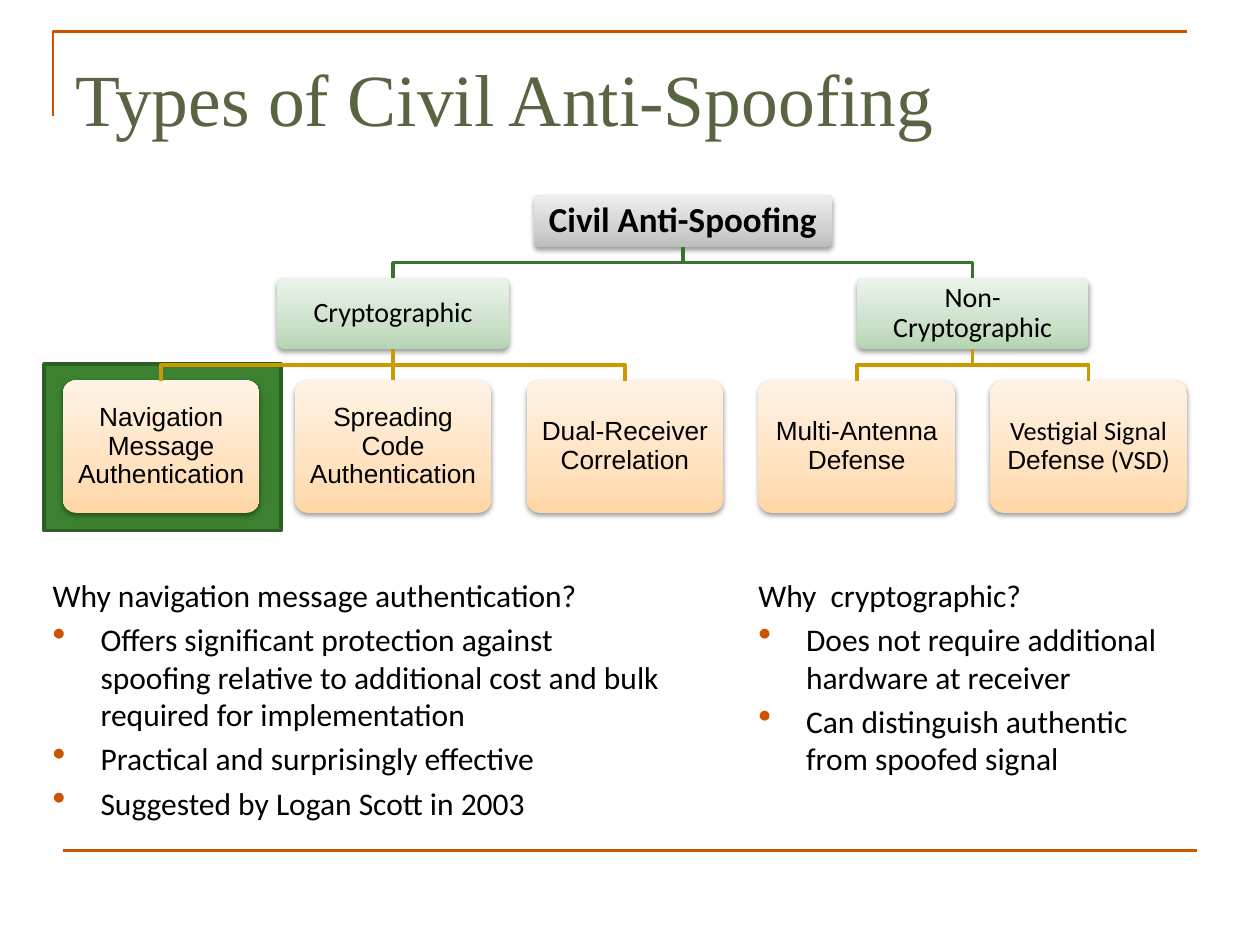
from dataclasses import dataclass
from typing import NamedTuple

from lxml.etree import SubElement
from pptx import Presentation
from pptx.dml.color import RGBColor
from pptx.enum.shapes import MSO_CONNECTOR, MSO_SHAPE
from pptx.enum.text import MSO_ANCHOR, PP_ALIGN
from pptx.oxml.ns import qn
from pptx.util import Inches, Pt

COLORS = {
    "rule": "CC5300", "title": "596442", "text": "000000", "shadow": "000000",
    "highlight": "3B812F", "highlight_edge": "2C5F23",
    "green_edge": "35742A", "gold_edge": "CC9900",
}
GRADIENTS = {  # from bottom to top
    "gray": ("BDBDBD", "D1D1D1", "EEEEEE"),
    "green": ("B5D5B2", "CCE1CA", "EBF4EB"),
    "orange": ("FFD6A5", "FFE2BF", "FFF3E7"),
}
STOPS = (0, 35000, 100000)
GRID_LEFT, COLUMN = 0.36, 1.84  # five equal columns, one per leaf


class Piece(NamedTuple):
    text: str
    font: str


class Level(NamedTuple):
    top: float
    width: float
    height: float
    gradient: str
    size: int
    inset: float
    bold: bool = False


@dataclass
class Node:
    column: float
    level: Level
    pieces: list[Piece]

    @property
    def center(self) -> float:
        return GRID_LEFT + COLUMN * (self.column + 0.5)

    @property
    def bottom(self) -> float:
        return self.level.top + self.level.height


class Notes(NamedTuple):
    left: float
    width: float
    heading: str
    bullets: list[str]


ROOT = Level(1.55, 2.37, 0.41, "gray", 20, 0.08, True)
FAMILY = Level(2.21, 1.84, 0.56, "green", 16, 0.07)
METHOD = Level(3.02, 1.56, 1.05, "orange", 15, 0.06)

root = Node(2.25, ROOT, [Piece("Civil Anti-Spoofing", "Calibri")])
cryptographic = Node(1, FAMILY, [Piece("Cryptographic", "Calibri")])
non_cryptographic = Node(3.5, FAMILY, [Piece("Non-Cryptographic", "Calibri")])
methods = [Node(column, METHOD, pieces) for column, pieces in enumerate([
    [Piece("Navigation Message Authentication", "Arial")],
    [Piece("Spreading Code Authentication", "Arial")],
    [Piece("Dual-Receiver Correlation", "Arial")],
    [Piece("Multi-Antenna Defense", "Arial")],
    [Piece("Vestigial Signal ", "Calibri"), Piece("Defense", "Arial"),
     Piece(" (VSD)", "Calibri")],
])]
BRANCHES = [
    (root, [cryptographic, non_cryptographic], "green_edge"),
    (cryptographic, methods[:3], "gold_edge"),
    (non_cryptographic, methods[3:], "gold_edge"),
]
NOTES = [
    Notes(0.32, 5.07, "Why navigation message authentication?", [
        "Offers significant protection against spoofing relative to additional "
        "cost and bulk required for implementation",
        "Practical and surprisingly effective",
        "Suggested by Logan Scott in 2003"]),
    Notes(5.92, 3.5, "Why  cryptographic?", [
        "Does not require additional hardware at receiver",
        "Can distinguish authentic from spoofed signal"]),
]


def color(name: str) -> RGBColor:
    return RGBColor.from_string(COLORS[name])


def style_font(font, name: str, size: float, color_name: str, bold=False) -> None:
    font.name, font.size, font.bold = name, Pt(size), bold
    font.color.rgb = color(color_name)


def style_line(shape, color_name: str, width: float) -> None:
    shape.line.color.rgb = color(color_name)
    shape.line.width = Pt(width)


def add_line(slide, start: tuple, end: tuple, color_name: str, width: float):
    connector = slide.shapes.add_connector(
        MSO_CONNECTOR.STRAIGHT, *map(Inches, start + end))
    style_line(connector, color_name, width)
    SubElement(connector._element.spPr, qn("a:effectLst"))
    return connector


def add_polyline(slide, points: list[tuple], color_name: str, width: float) -> None:
    corners = [(Inches(x), Inches(y)) for x, y in points]
    builder = slide.shapes.build_freeform(*corners[0])
    builder.add_line_segments(corners[1:], close=False)
    shape = builder.convert_to_shape()
    shape.fill.background()
    shape.shadow.inherit = False
    style_line(shape, color_name, width)


def add_gradient_and_shadow(shape, gradient: str) -> None:
    shape.fill.gradient()
    shape.fill.gradient_angle = 90
    properties = shape._element.spPr
    stops = properties.find(".//" + qn("a:gsLst"))
    for stop in list(stops):
        stops.remove(stop)
    for position, value in zip(STOPS, GRADIENTS[gradient]):
        stop = SubElement(stops, qn("a:gs"), pos=str(position))
        SubElement(stop, qn("a:srgbClr"), val=value)
    shape.line.fill.background()
    shape.shadow.inherit = False
    shadow = SubElement(properties.find(qn("a:effectLst")), qn("a:outerShdw"),
                        blurRad=str(Pt(3.1)), dist=str(Pt(1.6)),
                        dir="5400000", rotWithShape="0")
    tint = SubElement(shadow, qn("a:srgbClr"), val=COLORS["shadow"])
    SubElement(tint, qn("a:alpha"), val="38000")


def add_node(slide, node: Node):
    level = node.level
    shape = slide.shapes.add_shape(
        MSO_SHAPE.ROUNDED_RECTANGLE, Inches(node.center - level.width / 2),
        Inches(level.top), Inches(level.width), Inches(level.height))
    shape.adjustments[0] = 0.1
    add_gradient_and_shadow(shape, level.gradient)
    frame = shape.text_frame
    frame.word_wrap, frame.vertical_anchor = True, MSO_ANCHOR.MIDDLE
    frame.margin_left = frame.margin_right = Inches(level.inset)
    frame.margin_top = frame.margin_bottom = Inches(level.inset)
    paragraph = frame.paragraphs[0]
    paragraph.alignment, paragraph.line_spacing = PP_ALIGN.CENTER, 0.9
    for piece in node.pieces:
        run = paragraph.add_run()
        run.text = piece.text
        style_font(run.font, piece.font, level.size, "text", level.bold)
    return shape


def add_edge(slide, parent: Node, child: Node, shapes: dict, color_name: str) -> None:
    start, end = (parent.center, parent.bottom), (child.center, child.level.top)
    if parent.column == child.column:
        connector = add_line(slide, start, end, color_name, 2)
        connector.begin_connect(shapes[id(parent)], 2)
        connector.end_connect(shapes[id(child)], 0)
        return
    middle = (start[1] + end[1]) / 2
    add_polyline(slide, [start, (start[0], middle), (end[0], middle), end],
                 color_name, 2)


def add_text_box(slide, left: float, top: float, width: float, height: float):
    box = slide.shapes.add_textbox(*map(Inches, (left, top, width, height)))
    box.text_frame.word_wrap = True
    return box.text_frame


def add_notes(slide, notes: Notes) -> None:
    frame = add_text_box(slide, notes.left, 4.52, notes.width, 2)
    frame.text = "\n".join([notes.heading, *notes.bullets])
    for index, paragraph in enumerate(frame.paragraphs):
        properties = paragraph._p.get_or_add_pPr()
        properties.set("marL", str(Inches(0.38)))
        properties.set("indent", str(-Inches(0.38)))
        if index:
            paragraph.space_before = Pt(3.6)
            bullet_color = SubElement(properties, qn("a:buClr"))
            SubElement(bullet_color, qn("a:srgbClr"), val=COLORS["rule"])
            SubElement(properties, qn("a:buSzPct"), val="120000")
            SubElement(properties, qn("a:buChar"), char="•")
        style_font(paragraph.runs[0].font, "Calibri", 18, "text")


def main() -> None:
    presentation = Presentation()
    presentation.slide_width, presentation.slide_height = Inches(10), Inches(7.5)
    slide = presentation.slides.add_slide(presentation.slide_layouts[6])

    # Frame rules and title
    add_polyline(slide, [(0.42, 0.92), (0.42, 0.25), (9.42, 0.25)], "rule", 1.5)
    add_line(slide, (0.5, 6.75), (9.5, 6.75), "rule", 1.5)
    title = add_text_box(slide, 0.5, 0.3, 9, 1.25)
    title.margin_top = Inches(0.12)
    title.text = "Types of Civil Anti-Spoofing"
    style_font(title.paragraphs[0].runs[0].font, "Times New Roman", 42, "title")

    # Highlight behind the first method
    highlight = slide.shapes.add_shape(
        MSO_SHAPE.RECTANGLE, *map(Inches, (0.35, 2.89, 1.88, 1.32)))
    highlight.fill.solid()
    highlight.fill.fore_color.rgb = color("highlight")
    style_line(highlight, "highlight_edge", 2)
    highlight.shadow.inherit = False

    # Tree
    nodes = [root, cryptographic, non_cryptographic, *methods]
    shapes = {id(node): add_node(slide, node) for node in nodes}
    for parent, children, color_name in BRANCHES:
        for child in children:
            add_edge(slide, parent, child, shapes, color_name)

    # Reasons below the tree
    for notes in NOTES:
        add_notes(slide, notes)

    presentation.save("out.pptx")


if __name__ == "__main__":
    main()
